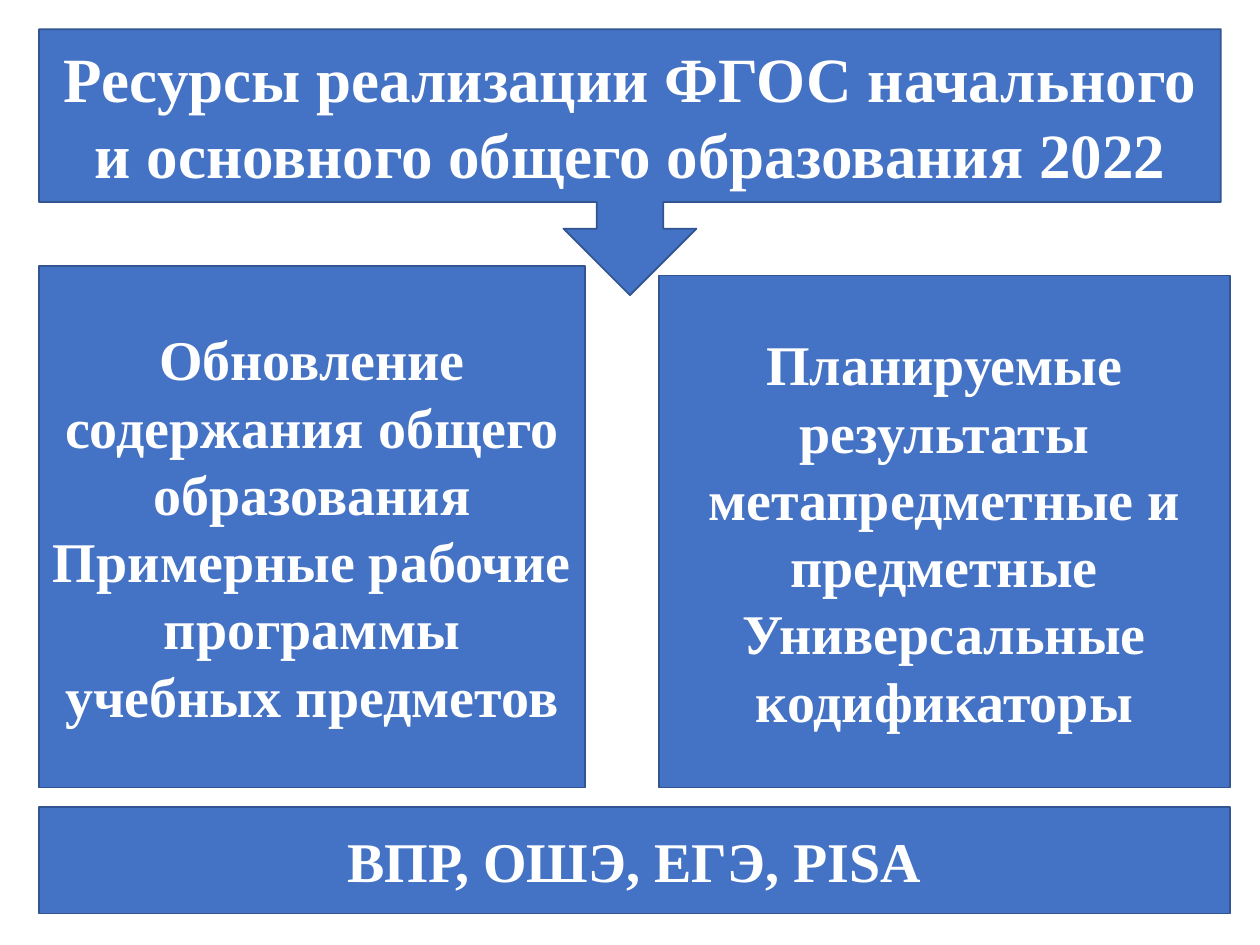
import pptx
import pptx.util
import pptx.dml.color
import pptx.enum.shapes
import pptx.enum.text

Pt = pptx.util.Pt
SHAPES = pptx.enum.shapes.MSO_SHAPE

COLORS = {"fill": "4472C4", "line": "325491", "text": "FFFFFF"}
FONT = "Times New Roman"

# Content
HEADING = ["Ресурсы реализации ФГОС начального и основного общего образования 2022"]
CONTENT_UPDATE = [
    "Обновление содержания общего образования",
    "Примерные рабочие программы учебных предметов",
]
PLANNED_RESULTS = [
    "Планируемые результаты метапредметные и предметные",
    "Универсальные кодификаторы",
]
ASSESSMENTS = ["ВПР, ОШЭ, ЕГЭ, PISA"]

# Shared edges, in points
LEFT, RIGHT = 22.3, 702.7
COLUMNS_BOTTOM = 450
RESULTS_LEFT, RESULTS_TOP = 376.6, 157.5
UPDATE_TOP, UPDATE_RIGHT = 151.9, 334.4

# Kind, left, top, right, bottom, text size, paragraphs (back to front)
BOXES = [
    (SHAPES.RECTANGLE, LEFT, UPDATE_TOP, UPDATE_RIGHT, COLUMNS_BOTTOM, 32, CONTENT_UPDATE),
    (SHAPES.RECTANGLE, RESULTS_LEFT, RESULTS_TOP, RIGHT, COLUMNS_BOTTOM, 32, PLANNED_RESULTS),
    (SHAPES.DOWN_ARROW_CALLOUT, LEFT, 16.7, 697.6, 168.7, 36, HEADING),
    (SHAPES.RECTANGLE, LEFT, 461.2, RIGHT, 522, 32, ASSESSMENTS),
]


def color(name):
    return pptx.dml.color.RGBColor.from_string(COLORS[name])


def add_box(slide, kind, left, top, right, bottom, size, paragraphs):
    box = slide.shapes.add_shape(kind, Pt(left), Pt(top), Pt(right - left), Pt(bottom - top))
    box.shadow.inherit = False
    box.fill.solid()
    box.fill.fore_color.rgb = color("fill")
    box.line.color.rgb = color("line")
    box.line.width = Pt(1)

    frame = box.text_frame
    frame.word_wrap = True
    frame.vertical_anchor = pptx.enum.text.MSO_ANCHOR.MIDDLE
    for index, text in enumerate(paragraphs):
        para = frame.add_paragraph() if index else frame.paragraphs[0]
        para.alignment = pptx.enum.text.PP_ALIGN.CENTER
        span = para.add_run()
        span.text = text
        span.font.name = FONT
        span.font.size = Pt(size)
        span.font.bold = True
        span.font.color.rgb = color("text")


def main():
    deck = pptx.Presentation()
    deck.slide_width, deck.slide_height = Pt(720), Pt(540)
    slide = deck.slides.add_slide(deck.slide_layouts.get_by_name("Blank"))
    for box in BOXES:
        add_box(slide, *box)
    deck.save("out.pptx")


if __name__ == "__main__":
    main()
